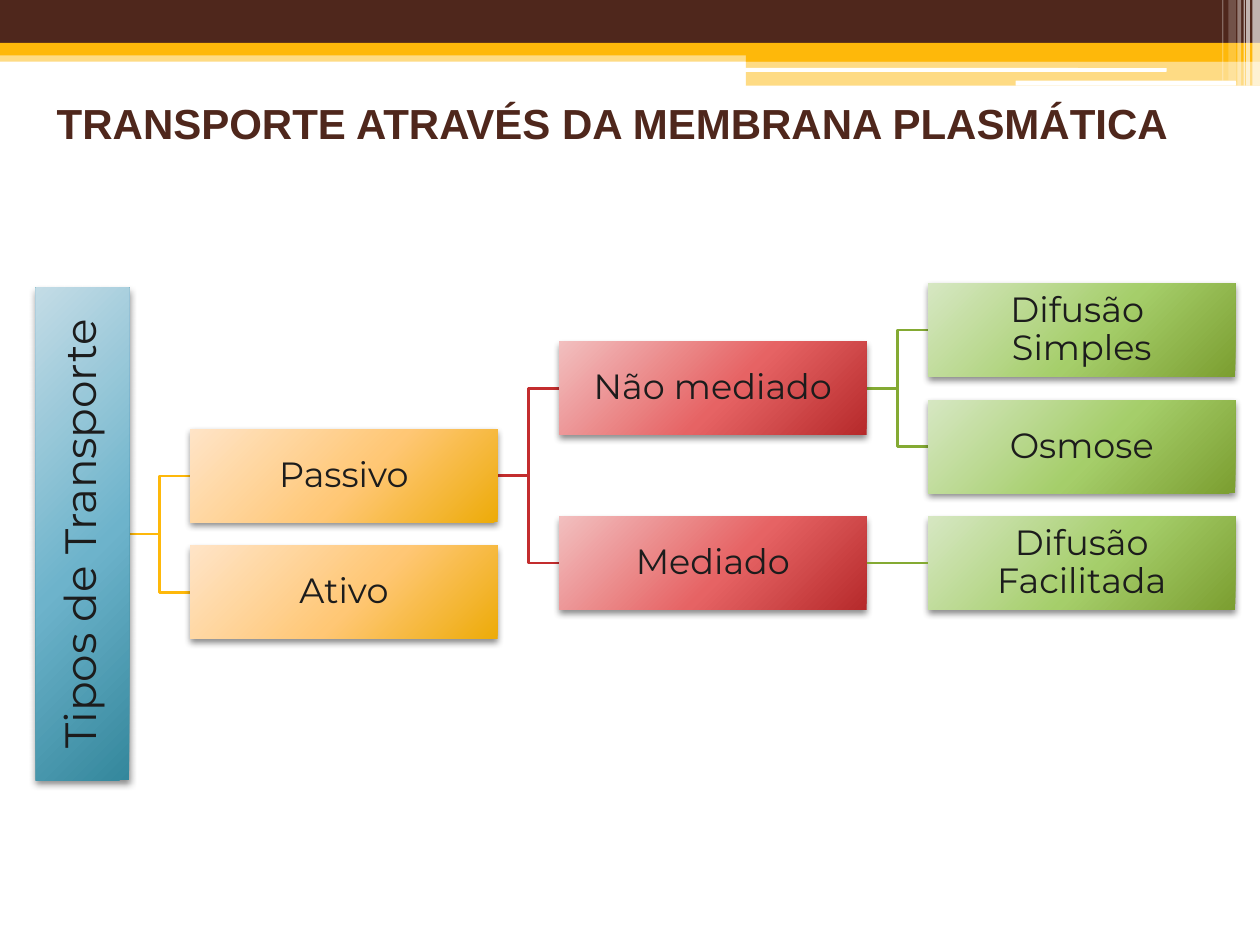
from pptx import Presentation
from pptx.dml.color import RGBColor
from pptx.enum.shapes import MSO_CONNECTOR, MSO_SHAPE
from pptx.enum.text import MSO_ANCHOR, MSO_AUTO_SIZE, PP_ALIGN
from pptx.oxml import parse_xml
from pptx.oxml.ns import nsdecls, qn
from pptx.util import Inches, Pt

BROWN = RGBColor(0x4F, 0x27, 0x1C)
AMBER = RGBColor(0xFE, 0xB8, 0x0A)
RED = RGBColor(0xC3, 0x2D, 0x2E)
GREEN = RGBColor(0x84, 0xAA, 0x33)
WHITE = RGBColor(0xFF, 0xFF, 0xFF)
INK = RGBColor(0x1C, 0x1C, 0x1C)

# Gradient stops at 0, 55 and 100 percent
BLUE_BLEND = (RGBColor(0xC3, 0xDC, 0xE6), RGBColor(0x6D, 0xB3, 0xCB), RGBColor(0x34, 0x87, 0x9C))
AMBER_BLEND = (RGBColor(0xFF, 0xE4, 0xC7), RGBColor(0xFF, 0xC7, 0x75), RGBColor(0xED, 0xAB, 0x09))
RED_BLEND = (RGBColor(0xF2, 0xBF, 0xBF), RGBColor(0xE6, 0x63, 0x64), RGBColor(0xB6, 0x2A, 0x2B))
GREEN_BLEND = (RGBColor(0xD6, 0xE7, 0xC2), RGBColor(0xA5, 0xCE, 0x6A), RGBColor(0x7B, 0x9E, 0x30))

# The slide is a grid of 100 columns by 75 rows
COLUMNS, ROWS = 100, 75
BOX_WIDTH, BOX_HEIGHT = 24.4, 7.4
LEVEL_LEFT, LEVEL_STEP = 15.1, BOX_WIDTH * 1.2
TREE_TOP, TREE_STEP = 22.5, BOX_HEIGHT * 1.25
ROOT_LENGTH = 39.1

BANDS = [  # left, top, width, height, colour, opacity
    (0, 4, 100, 0.9, AMBER, 50),
    (0, 0, 100, 3.4, BROWN, 100),
    (0, 3.4, 100, 1, AMBER, 100),
    (59.2, 3.9, 40.8, 1, AMBER, 100),
    (59.2, 4.8, 40.8, 2, AMBER, 50),
]
ROUNDED_BANDS = [(59.1, 5.4, 33.5, 0.3), (80.6, 6.4, 17.5, 0.4)]
STRIPES = [  # left, width, height, opacity
    (99.4, 0.6, 6.8, 65),
    (98.9, 0.3, 6.8, 65),
    (98.7, 0.1, 6.8, 60),
    (98.2, 0.3, 6.8, 40),
    (97.5, 0.6, 6.4, 20),
    (97, 0.1, 6.4, 30),
]

BOXES = [  # text, level, row in the tree, gradient
    ("Passivo", 0, 1.25, AMBER_BLEND),
    ("Não mediado", 1, 0.5, RED_BLEND),
    ("Difusão \nSimples", 2, 0, GREEN_BLEND),
    ("Osmose", 2, 1, GREEN_BLEND),
    ("Mediado", 1, 2, RED_BLEND),
    ("Difusão Facilitada", 2, 2, GREEN_BLEND),
    ("Ativo", 0, 2.25, AMBER_BLEND),
]
BRANCHES = [  # level reached, row left, row reached, colour
    (0, 1.75, 2.25, AMBER),
    (1, 1.25, 2, RED),
    (2, 0.5, 1, GREEN),
    (2, 0.5, 0, GREEN),
    (1, 1.25, 0.5, RED),
    (0, 1.75, 1.25, AMBER),
]


def write(frame, text, *, font, size, color, bold=False, align=PP_ALIGN.LEFT, spacing=1.0, inset=None):
    frame.word_wrap = True
    frame.auto_size = MSO_AUTO_SIZE.NONE
    frame.vertical_anchor = MSO_ANCHOR.MIDDLE
    if inset is not None:
        frame.margin_left = frame.margin_right = Inches(inset)
        frame.margin_top = frame.margin_bottom = Inches(inset)
    frame.text = text
    for para in frame.paragraphs:
        para.alignment = align
        para.line_spacing = spacing
        for span in para.runs:
            span.font.name = font
            span.font.size = Pt(size)
            span.font.bold = bold
            span.font.color.rgb = color


def level_left(level):
    return LEVEL_LEFT + level * LEVEL_STEP


def row_middle(row):
    return TREE_TOP + row * TREE_STEP + BOX_HEIGHT / 2


class DiagramPage:
    """Holds the style and the current slide; lengths are grid columns and rows."""

    title_font, box_font = "Arial", "Montserrat"
    line_width = Pt(1.5)

    def __init__(self, deck):
        self.column = deck.slide_width / COLUMNS
        self.row = deck.slide_height / ROWS
        self.page = deck.slides.add_slide(deck.slide_layouts[5])
        self.shapes = self.page.shapes

    def place(self, left, top, width, height):
        return (round(left * self.column), round(top * self.row),
                round(width * self.column), round(height * self.row))

    def title(self, text, *position):
        title = self.shapes.title
        title.left, title.top, title.width, title.height = self.place(*position)
        write(title.text_frame, text, font=self.title_font, size=24, color=BROWN, bold=True)

    def band(self, left, top, width, height, color, opacity=100, preset=MSO_SHAPE.RECTANGLE):
        band = self.shapes.add_shape(preset, *self.place(left, top, width, height))
        band.shadow.inherit = False
        band.line.fill.background()
        band.fill.solid()
        band.fill.fore_color.rgb = color
        if opacity < 100:
            fill_color = band.fill._xPr.find(qn("a:solidFill"))[0]
            fill_color.append(parse_xml(f'<a:alpha {nsdecls("a")} val="{opacity * 1000}"/>'))

    def box(self, text, left, top, width, height, blend, size=20, inset=0.01, rotation=0):
        box = self.shapes.add_shape(MSO_SHAPE.RECTANGLE, *self.place(left, top, width, height))
        box.rotation = rotation
        box.line.fill.background()
        box.fill.background()
        self.blend_and_shade(box, blend)
        write(box.text_frame, text, font=self.box_font, size=size, color=INK,
              align=PP_ALIGN.CENTER, spacing=0.9, inset=inset)
        return box

    def blend_and_shade(self, box, blend):
        """Give the box its gradient and a soft shadow below."""
        stops = "".join(f'<a:gs pos="{share * 1000}"><a:srgbClr val="{color}"/></a:gs>'
                        for share, color in zip((0, 55, 100), blend))
        gradient = parse_xml(
            f'<a:gradFill {nsdecls("a")} rotWithShape="1"><a:gsLst>{stops}</a:gsLst>'
            '<a:path path="circle"><a:fillToRect l="-40000" t="-90000" r="140000" b="190000"/>'
            '</a:path></a:gradFill>')
        properties = box._element.spPr
        properties.replace(properties.find(qn("a:noFill")), gradient)
        box.shadow.inherit = False
        properties.find(qn("a:effectLst")).append(parse_xml(
            f'<a:outerShdw {nsdecls("a")} blurRad="{Pt(4)}" dist="{Pt(2)}" dir="5400000" '
            'rotWithShape="0"><a:srgbClr val="000000"><a:alpha val="45000"/></a:srgbClr>'
            '</a:outerShdw>'))

    def branch(self, level, from_row, to_row, color):
        """Draw a stepped line across the gap before a level."""
        end = level_left(level)
        start = end - (LEVEL_STEP - BOX_WIDTH)
        middle = (start + end) / 2
        top, bottom = row_middle(from_row), row_middle(to_row)
        points = [self.place(x, y, 0, 0)[:2]
                  for x, y in ((start, top), (middle, top), (middle, bottom), (end, bottom))]
        builder = self.shapes.build_freeform(*points[0])
        builder.add_line_segments(points[1:], close=False)
        branch = builder.convert_to_shape()
        branch.shadow.inherit = False
        branch.fill.background()
        branch.line.color.rgb = color
        branch.line.width = self.line_width

    def link(self, first, second, color):
        link = self.shapes.add_connector(MSO_CONNECTOR.STRAIGHT, 0, 0, 0, 0)
        link.begin_connect(first, 3)
        link.end_connect(second, 1)
        link.line.color.rgb = color
        link.line.width = self.line_width
        link._element.spPr.append(parse_xml(f'<a:effectLst {nsdecls("a")}/>'))


def main():
    deck = Presentation()
    deck.slide_width, deck.slide_height = Inches(10), Inches(7.5)
    page = DiagramPage(deck)

    for band in BANDS:
        page.band(*band)
    for position in ROUNDED_BANDS:
        page.band(*position, WHITE, preset=MSO_SHAPE.ROUNDED_RECTANGLE)
    for left, width, height, opacity in STRIPES:
        page.band(left, 0, width, height, WHITE, opacity)
    page.title("TRANSPORTE ATRAVÉS DA MEMBRANA PLASMÁTICA", 3.5, 6.4, 94.1, 6.7)

    for branch in BRANCHES:
        page.branch(*branch)
    page.box("Tipos de Transporte", -13, row_middle(1.75) - BOX_HEIGHT / 2, ROOT_LENGTH,
             BOX_HEIGHT, BLUE_BLEND, size=25, inset=0.02, rotation=270)
    boxes = {}
    for text, level, row, blend in BOXES:
        boxes[text] = page.box(text, level_left(level), TREE_TOP + row * TREE_STEP,
                               BOX_WIDTH, BOX_HEIGHT, blend)
    page.link(boxes["Mediado"], boxes["Difusão Facilitada"], GREEN)

    deck.save("out.pptx")


if __name__ == "__main__":
    main()
